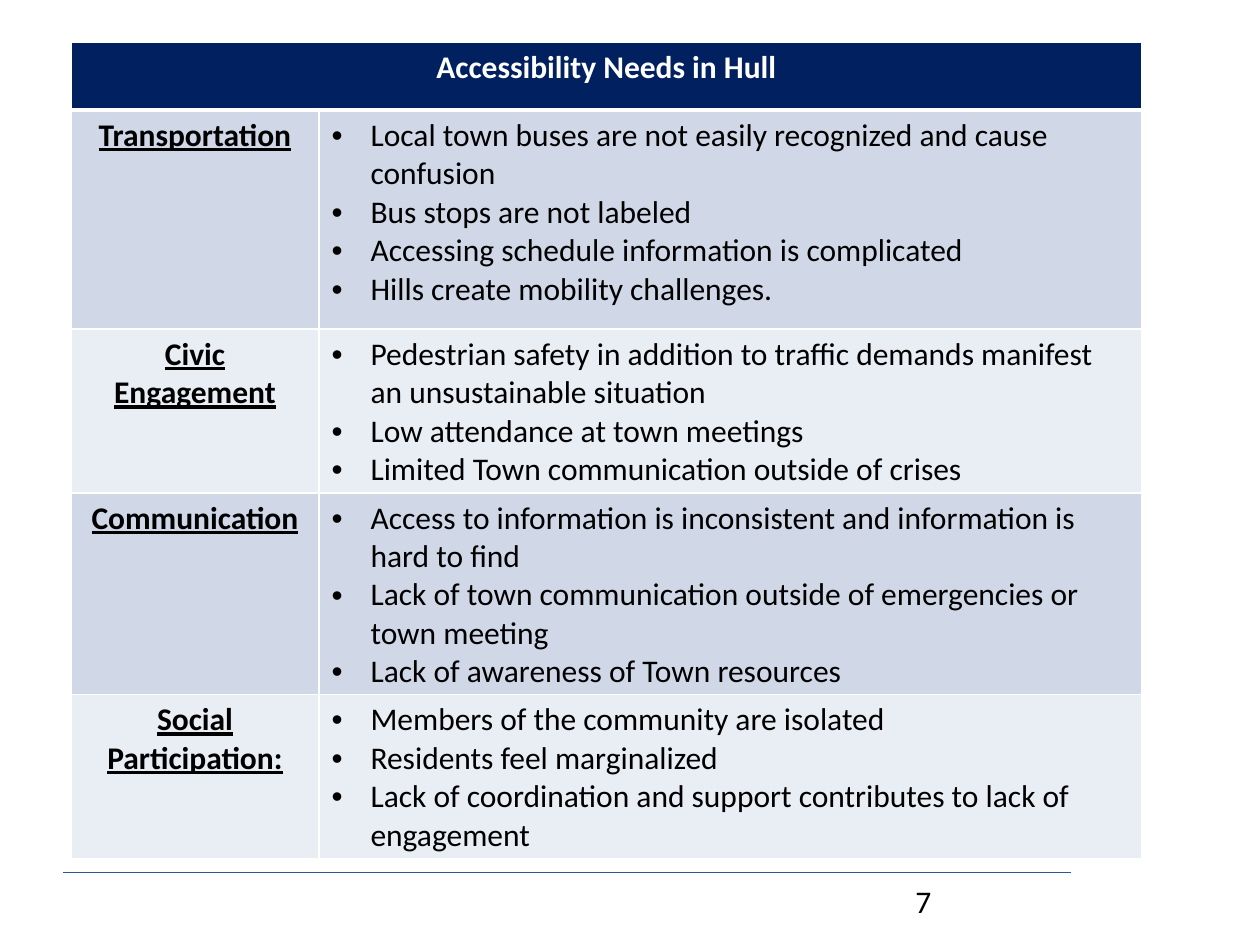
from dataclasses import dataclass

import pptx
import pptx.dml.color
import pptx.enum.shapes
import pptx.enum.text
import pptx.oxml.ns
import pptx.util
from lxml import etree

PX = 914400 // 126
FONT = "Calibri"
NAVY = pptx.dml.color.RGBColor(0x00, 0x20, 0x60)
BLUE = pptx.dml.color.RGBColor(0x2D, 0x58, 0x8D)
BAND_DARK = pptx.dml.color.RGBColor(0xD0, 0xD8, 0xE8)
BAND_LIGHT = pptx.dml.color.RGBColor(0xE9, 0xED, 0xF4)
WHITE = pptx.dml.color.RGBColor(0xFF, 0xFF, 0xFF)
BLACK = pptx.dml.color.RGBColor(0x00, 0x00, 0x00)
CENTER = pptx.enum.text.PP_ALIGN.CENTER
LEFT = pptx.enum.text.PP_ALIGN.LEFT

COLUMN_WIDTHS = (248, 823)
HEADER_HEIGHT = 68
TABLE_HEIGHT = 816
BULLET_INDENT = 39


@dataclass(frozen=True)
class Need:
    topic: str
    points: tuple[str, ...]
    height: int


NEEDS = (
    Need("Transportation", (
        "Local town buses are not easily recognized and cause confusion",
        "Bus stops are not labeled",
        "Accessing schedule information is complicated",
        "Hills create mobility challenges.",
    ), 219),
    Need("Civic Engagement", (
        "Pedestrian safety in addition to traffic demands manifest an unsustainable situation",
        "Low attendance at town meetings",
        "Limited Town communication outside of crises",
    ), 160),
    Need("Communication", (
        "Access to information is inconsistent and information is hard to find",
        "Lack of town communication outside of emergencies or town meeting",
        "Lack of awareness of Town resources",
    ), 192),
    Need("Social Participation:", (
        "Members of the community are isolated",
        "Residents feel marginalized",
        "Lack of coordination and support contributes to lack of engagement",
    ), 68),
)


def px(length: int) -> int:
    return pptx.util.Emu(length * PX)


def add_child(parent, tag: str, **attributes: str):
    child = etree.SubElement(parent, pptx.oxml.ns.qn(tag))
    for name, value in attributes.items():
        child.set(name, value)
    return child


def write(frame, *lines: str, color=BLACK, bold=False, underline=False,
          align=LEFT, bullets=False) -> None:
    """Put one paragraph per line into a text frame."""
    for index, line in enumerate(lines):
        para = frame.paragraphs[0] if index == 0 else frame.add_paragraph()
        para.alignment = align
        if bullets:
            properties = para._p.get_or_add_pPr()
            properties.set("marL", str(px(BULLET_INDENT)))
            properties.set("indent", str(-px(BULLET_INDENT)))
            add_child(properties, "a:buFont", typeface="Arial")
            add_child(properties, "a:buChar", char="•")
        span = para.add_run()
        span.text = line
        span.font.name = FONT
        span.font.size = pptx.util.Pt(18)
        span.font.bold = bold
        span.font.underline = underline
        span.font.color.rgb = color


def style_cell(cell, fill, top: int = 1, bottom: int = 1) -> None:
    """Fill a cell and give it white borders, with widths in points."""
    cell.fill.solid()
    cell.fill.fore_color.rgb = fill
    properties = cell._tc.get_or_add_tcPr()
    borders = {"a:lnL": 1, "a:lnR": 1, "a:lnT": top, "a:lnB": bottom}
    for index, (tag, width) in enumerate(borders.items()):
        border = add_child(properties, tag, w=str(pptx.util.Pt(width)))
        add_child(add_child(border, "a:solidFill"), "a:srgbClr", val=str(WHITE))
        properties.insert(index, border)


def add_needs_table(page) -> None:
    frame = page.shapes.add_table(
        len(NEEDS) + 1, len(COLUMN_WIDTHS),
        px(71), px(42), px(sum(COLUMN_WIDTHS)), px(TABLE_HEIGHT))
    table = frame.table
    table.first_row = table.horz_banding = False
    for column, width in zip(table.columns, COLUMN_WIDTHS):
        column.width = px(width)

    table.rows[0].height = px(HEADER_HEIGHT)
    header = table.cell(0, 0)
    header.merge(table.cell(0, 1))
    for column in range(len(COLUMN_WIDTHS)):
        style_cell(table.cell(0, column), NAVY, bottom=3)
    write(header.text_frame, "Accessibility Needs in Hull",
          color=WHITE, bold=True, align=CENTER)

    for row, need in enumerate(NEEDS, start=1):
        table.rows[row].height = px(need.height)
        topic, points = table.cell(row, 0), table.cell(row, 1)
        for cell in (topic, points):
            style_cell(cell, BAND_DARK if row % 2 else BAND_LIGHT,
                       top=3 if row == 1 else 1)
        write(topic.text_frame, need.topic, bold=True, underline=True, align=CENTER)
        write(points.text_frame, *need.points, bullets=True)
    frame.height = px(TABLE_HEIGHT)


def add_footer(page) -> None:
    rule = page.shapes.add_connector(
        pptx.enum.shapes.MSO_CONNECTOR.STRAIGHT, px(63), px(872), px(1071), px(872))
    rule.line.color.rgb = BLUE
    rule.line.width = pptx.util.Pt(0.5)
    add_child(rule._element.spPr, "a:effectLst")

    box = page.shapes.add_textbox(px(903), px(876), px(294), px(50))
    box.text_frame.word_wrap = True
    write(box.text_frame, "7")


def main() -> None:
    deck = pptx.Presentation()
    deck.slide_width, deck.slide_height = px(1260), px(945)
    page = deck.slides.add_slide(deck.slide_layouts[6])
    add_footer(page)
    add_needs_table(page)
    deck.save("out.pptx")


if __name__ == "__main__":
    main()
